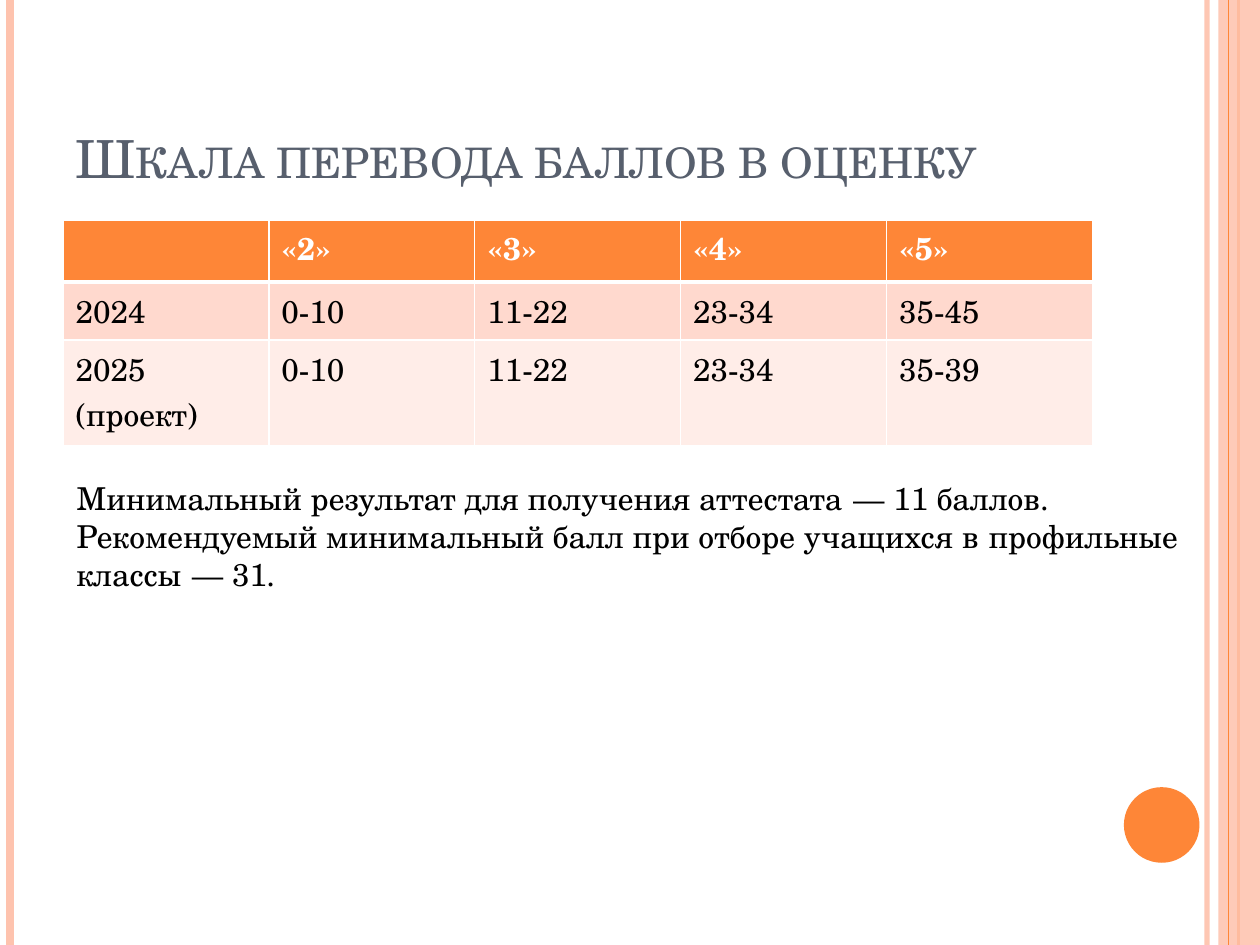
from dataclasses import dataclass

from lxml.etree import SubElement
from pptx import Presentation
from pptx.dml.color import RGBColor
from pptx.enum.shapes import MSO_CONNECTOR, MSO_SHAPE
from pptx.enum.text import MSO_ANCHOR, MSO_AUTO_SIZE, PP_ALIGN
from pptx.oxml.ns import qn
from pptx.util import Inches, Pt


@dataclass(frozen=True)
class Theme:
    """Colours, font and type sizes of the slide."""
    font: str = "TeX Gyre Schola"
    accent: str = "FE8637"
    pale: str = "FEC3AE"
    heading: str = "575F6D"
    ink: str = "000000"
    paper: str = "FFFFFF"
    bands: tuple = ("FE8637", "FFD9CE", "FFEDE8")
    title_size: float = 30
    body_size: float = 18
    table_leading: float = 26
    note_leading: float = 21.7


THEME = Theme()
WIDTH, HEIGHT = Inches(10), Inches(7.5)
GRADES = [
    ["", "«2»", "«3»", "«4»", "«5»"],
    ["2024", "0-10", "11-22", "23-34", "35-45"],
    ["2025 (проект)", "0-10", "11-22", "23-34", "35-39"],
]
NOTE = ("Минимальный результат для получения аттестата\u00a0— 11 баллов. "
        "Рекомендуемый минимальный балл при отборе учащихся в\u00a0профильные "
        "классы\u00a0— 31.")


def box(left, top, width, height):
    """Turn inches into a left, top, width, height tuple."""
    return tuple(Inches(side) for side in (left, top, width, height))


def set_opacity(fill, percent):
    """Make a solid fill or line partly transparent."""
    colour = fill._xPr.find(qn("a:solidFill"))[0]
    SubElement(colour, qn("a:alpha"), val=str(percent * 1000))


def style_text(frame, size, colour, bold=False, leading=None):
    """Give every run of a text frame the same look."""
    for paragraph in frame.paragraphs:
        paragraph.alignment = PP_ALIGN.LEFT
        if leading:
            paragraph.line_spacing = Pt(leading)
        for font in [paragraph.font] + [run.font for run in paragraph.runs]:
            font.name, font.size, font.bold = THEME.font, Pt(size), bold
            font.color.rgb = RGBColor.from_string(colour)


def add_stripe(slide, area, share, colour, weight, opacity=100):
    """Draw a full-height vertical line at a share of the area's width."""
    left, top, width, height = area
    x = left + round(width * share)
    stripe = slide.shapes.add_connector(MSO_CONNECTOR.STRAIGHT, x, top, x, top + height)
    stripe.line.color.rgb = RGBColor.from_string(colour)
    stripe.line.width = Pt(weight)
    if opacity < 100:
        set_opacity(stripe.line.fill, opacity)
    SubElement(stripe._element.spPr, qn("a:effectLst"))


def add_solid(slide, preset, place, colour, opacity=100):
    """Draw a preset shape with a plain fill and no outline."""
    solid = slide.shapes.add_shape(preset, *place)
    solid.shadow.inherit = False
    solid.fill.solid()
    solid.fill.fore_color.rgb = RGBColor.from_string(colour)
    solid.line.fill.background()
    if opacity < 100:
        set_opacity(solid.fill, opacity)


def add_frame(slide, area):
    """Place the edge stripes, the side band and the corner disc."""
    left, top, width, height = area
    add_stripe(slide, area, 0.958, THEME.pale, 3, 93)
    add_stripe(slide, area, 0.008, THEME.pale, 4.5)
    add_stripe(slide, area, 0.983, THEME.accent, 1.5)
    band = round(width * 0.033)
    add_solid(slide, MSO_SHAPE.RECTANGLE,
              (left + width - band, top, band, height), THEME.pale, 87)
    add_stripe(slide, area, 0.975, THEME.accent, 0.75)
    disc = round(width * 0.06)
    add_solid(slide, MSO_SHAPE.OVAL,
              (left + round(width * 0.892), top + round(height * 0.833), disc, disc),
              THEME.accent)


def add_title(slide, area):
    """Place the small-caps heading in the title placeholder."""
    title = slide.shapes.title
    title.left, title.top, title.width, title.height = area
    frame = title.text_frame
    frame.text = "Шкала перевода баллов в оценку"
    frame.vertical_anchor = MSO_ANCHOR.BOTTOM
    frame.auto_size = MSO_AUTO_SIZE.NONE
    style_text(frame, THEME.title_size, THEME.heading)
    for run in frame.paragraphs[0].runs:
        run.font._element.set("cap", "small")


def set_borders(cell, weights):
    """Draw white borders with a weight in points for each side."""
    properties = cell._tc.get_or_add_tcPr()
    for position, (side, weight) in enumerate(weights.items()):
        border = SubElement(properties, qn(f"a:ln{side}"), w=str(Pt(weight)))
        paint = SubElement(border, qn("a:solidFill"))
        SubElement(paint, qn("a:srgbClr"), val=THEME.paper)
        properties.insert(position, border)


def add_grades(slide, area, row_shares):
    """Place the table of points for each mark."""
    left, top, width, height = area
    grades = slide.shapes.add_table(len(GRADES), len(GRADES[0]), *area).table
    for column in grades.columns:
        column.width = round(width / len(GRADES[0]))
    for row, share in zip(grades.rows, row_shares):
        row.height = round(height * share)
    for r, marks in enumerate(GRADES):
        header = r == 0
        for c, mark in enumerate(marks):
            cell = grades.cell(r, c)
            cell.text_frame.text = mark
            style_text(cell.text_frame, THEME.body_size,
                       THEME.paper if header else THEME.ink, header,
                       THEME.table_leading)
            cell.fill.solid()
            cell.fill.fore_color.rgb = RGBColor.from_string(THEME.bands[r])
            set_borders(cell, {"L": 1, "R": 1, "T": 3 if r == 1 else 1,
                               "B": 3 if header else 1})


def add_note(slide, area):
    """Place the remark on minimum results."""
    frame = slide.shapes.add_textbox(*area).text_frame
    frame.word_wrap = True
    frame.auto_size = MSO_AUTO_SIZE.SHAPE_TO_FIT_TEXT
    frame.text = NOTE
    style_text(frame, THEME.body_size, THEME.ink, leading=THEME.note_leading)


def main():
    """Build the slide and save it."""
    deck = Presentation()
    deck.slide_width, deck.slide_height = WIDTH, HEIGHT
    slide = deck.slides.add_slide(deck.slide_layouts[5])
    add_frame(slide, (0, 0, WIDTH, HEIGHT))
    add_title(slide, box(0.5, 0.3, 8.17, 1.25))
    add_grades(slide, box(0.5, 1.75, 8.17, 1.78), (0.27, 0.26, 0.47))
    add_note(slide, box(0.51, 3.75, 8.98, 1.01))
    deck.save("out.pptx")


if __name__ == "__main__":
    main()
